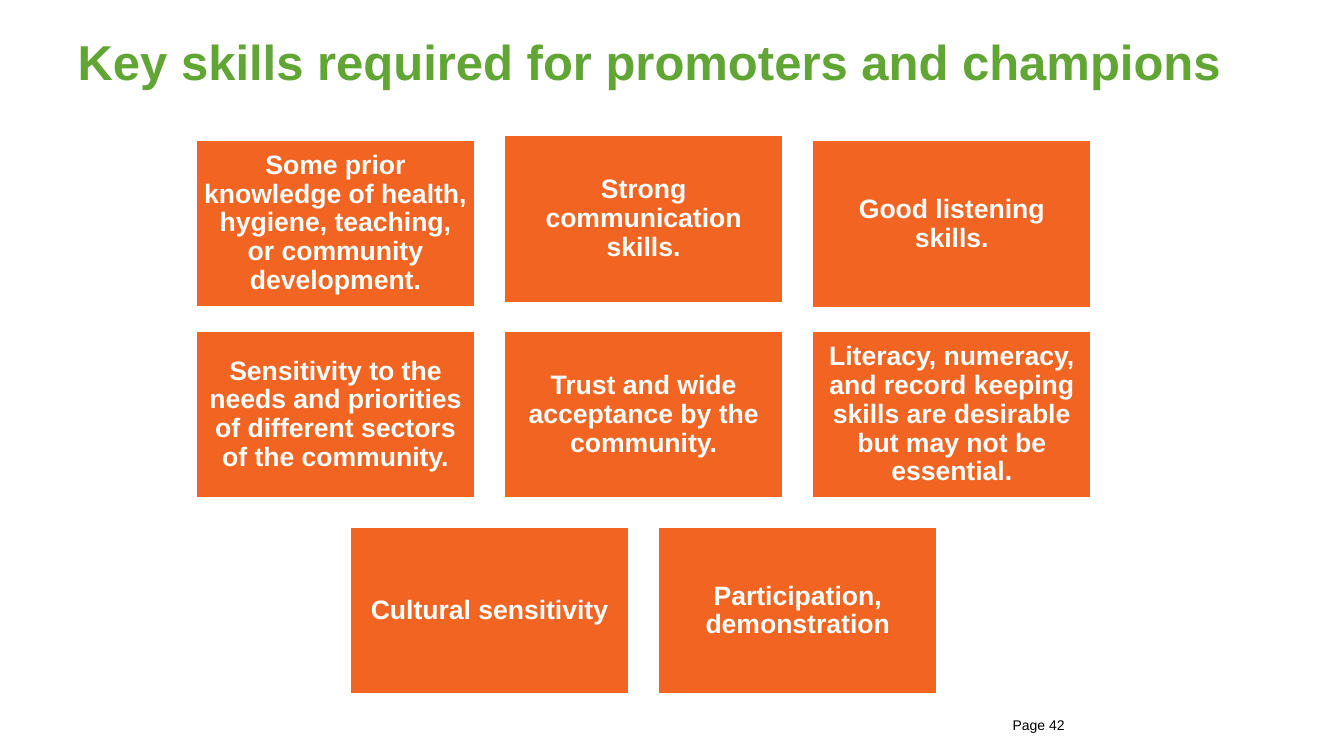
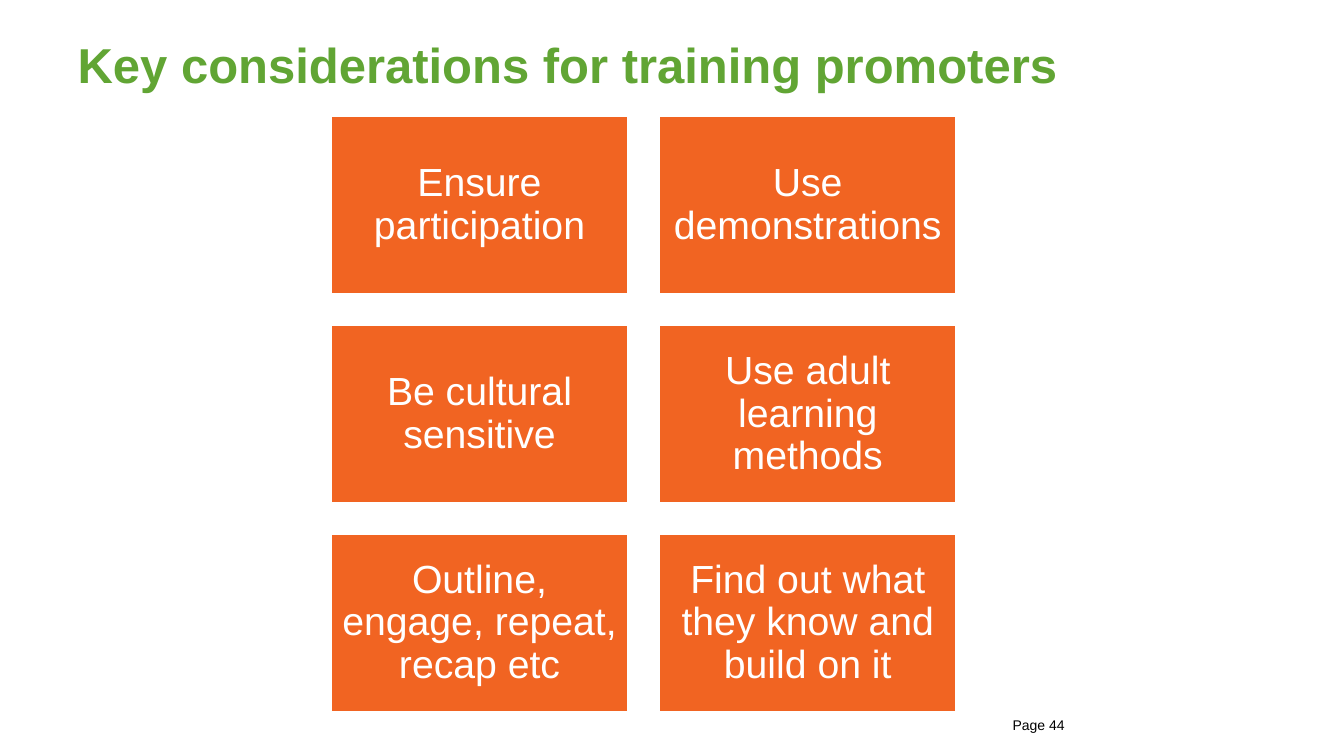
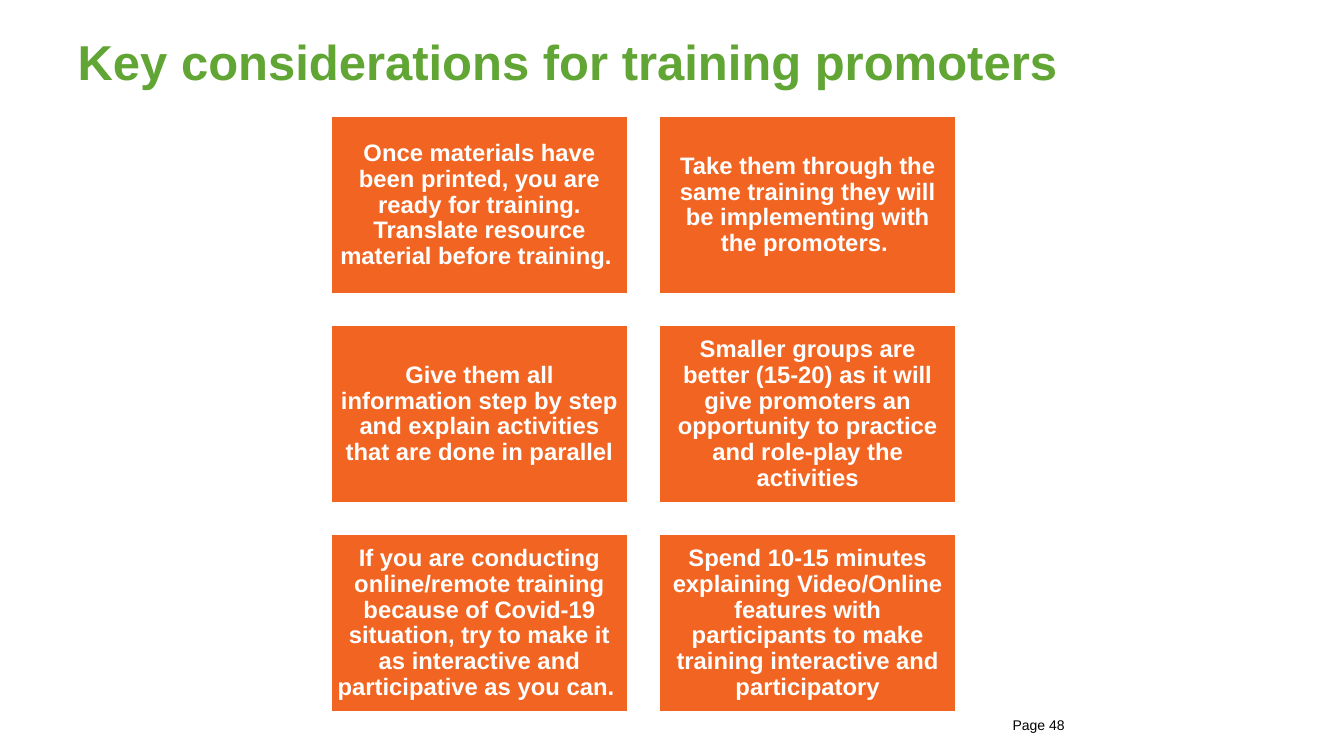
from pptx import Presentation
from pptx.dml.color import RGBColor
from pptx.enum.shapes import MSO_SHAPE
from pptx.enum.text import MSO_ANCHOR, MSO_AUTO_SIZE, PP_ALIGN
from pptx.util import Cm, Pt

# Content: tiles listed row by row; nudges lower single tiles of the first row
SLIDES = [
    {
        "title": "Key skills required for promoters and champions",
        "title_top": 0.53,
        "page": "Page 42",
        "tile_width": 7.06, "grid_top": 3.39, "size": 19, "bold": True,
        "nudges": [0.12, 0.01, 0.14],
        "rows": [
            ["Some prior knowledge of health, hygiene, teaching, or community development.",
             "Strong communication skills.",
             "Good listening skills."],
            ["Sensitivity to the needs and priorities of different sectors of the community.",
             "Trust and wide acceptance by the community.",
             "Literacy, numeracy, and record keeping skills are desirable but may not be essential."],
            ["Cultural sensitivity",
             "Participation, demonstration"],
        ],
    },
    {
        "title": "Key considerations for training promoters",
        "title_top": 0.61,
        "page": "Page 44",
        "tile_width": 7.52, "grid_top": 2.92, "size": 28, "bold": False,
        "nudges": [0, 0],
        "rows": [
            ["Ensure participation", "Use demonstrations"],
            ["Be cultural sensitive", "Use adult learning methods"],
            ["Outline, engage, repeat, recap etc", "Find out what they know and build on it"],
        ],
    },
    {
        "title": "Key considerations for training promoters",
        "title_top": 0.53,
        "page": "Page 48",
        "tile_width": 7.52, "grid_top": 2.92, "size": 17, "bold": True,
        "nudges": [0, 0],
        "rows": [
            ["Once materials have been printed, you are ready for training. "
             "Translate resource material before training. ",
             "Take them through the same training they will be implementing with the promoters. "],
            ["Give them all information step by step and explain activities that are done in parallel",
             "Smaller groups are better (15-20) as it will give promoters an opportunity "
             "to practice and role-play the activities"],
            ["If you are conducting online/remote training because of Covid-19 situation, "
             "try to make it as interactive and participative as you can. ",
             "Spend 10-15 minutes explaining Video/Online features with participants "
             "to make training interactive and participatory"],
        ],
    },
]

# Shared style
COLORS = {"title": "61A534", "tile": "F16422", "white": "FFFFFF", "page": "000000"}
FONT = "Arial"
GRID_CENTER = 16.22
TILE_RATIO = 0.6    # height to width
GAP_RATIO = 0.1     # gap to width
INSET_RATIO = 0.3   # margin to text size


def color(name):
    return RGBColor.from_string(COLORS[name])


def write(frame, text, size, color_name, bold=False, align=PP_ALIGN.LEFT):
    frame.word_wrap = True
    frame.auto_size = MSO_AUTO_SIZE.NONE
    paragraph = frame.paragraphs[0]
    paragraph.alignment = align
    run = paragraph.add_run()
    run.text = text
    run.font.name = FONT
    run.font.size = Pt(size)
    run.font.bold = bold
    run.font.color.rgb = color(color_name)
    return paragraph


def add_title(slide, text, top):
    title = slide.shapes.title
    title.left, title.top, title.width, title.height = Cm(1.7), Cm(top), Cm(30.48), Cm(2)
    title.text_frame.vertical_anchor = MSO_ANCHOR.MIDDLE
    write(title.text_frame, text, 35, "title", bold=True)


def add_page_label(slide, text):
    label = slide.shapes.add_textbox(Cm(25.27), Cm(17.93), Cm(4.55), Cm(0.46))
    write(label.text_frame, text, 10, "page")


def add_tile(slide, text, left, top, width, size, bold):
    tile = slide.shapes.add_shape(MSO_SHAPE.RECTANGLE, Cm(left), Cm(top),
                                  Cm(width), Cm(width * TILE_RATIO))
    tile.shadow.inherit = False
    tile.fill.solid()
    tile.fill.fore_color.rgb = color("tile")
    tile.line.color.rgb = color("white")
    tile.line.width = Pt(2)
    frame = tile.text_frame
    frame.vertical_anchor = MSO_ANCHOR.MIDDLE
    inset = Pt(size * INSET_RATIO)
    frame.margin_left = frame.margin_right = inset
    frame.margin_top = frame.margin_bottom = inset
    paragraph = write(frame, text, size, "white", bold, PP_ALIGN.CENTER)
    paragraph.line_spacing = 0.9


def add_grid(slide, content):
    width = content["tile_width"]
    gap = width * GAP_RATIO
    for row, texts in enumerate(content["rows"]):
        # Each row is centred on the same axis
        row_left = GRID_CENTER - (len(texts) * (width + gap) - gap) / 2
        row_top = content["grid_top"] + row * (width * TILE_RATIO + gap)
        for column, text in enumerate(texts):
            nudge = content["nudges"][column] if row == 0 else 0
            add_tile(slide, text, row_left + column * (width + gap), row_top + nudge,
                     width, content["size"], content["bold"])


def main():
    deck = Presentation()
    deck.slide_width, deck.slide_height = Cm(33.87), Cm(19.05)
    title_only = deck.slide_layouts[5]
    for content in SLIDES:
        slide = deck.slides.add_slide(title_only)
        add_page_label(slide, content["page"])
        add_title(slide, content["title"], content["title_top"])
        add_grid(slide, content)
    deck.save("out.pptx")


if __name__ == "__main__":
    main()
